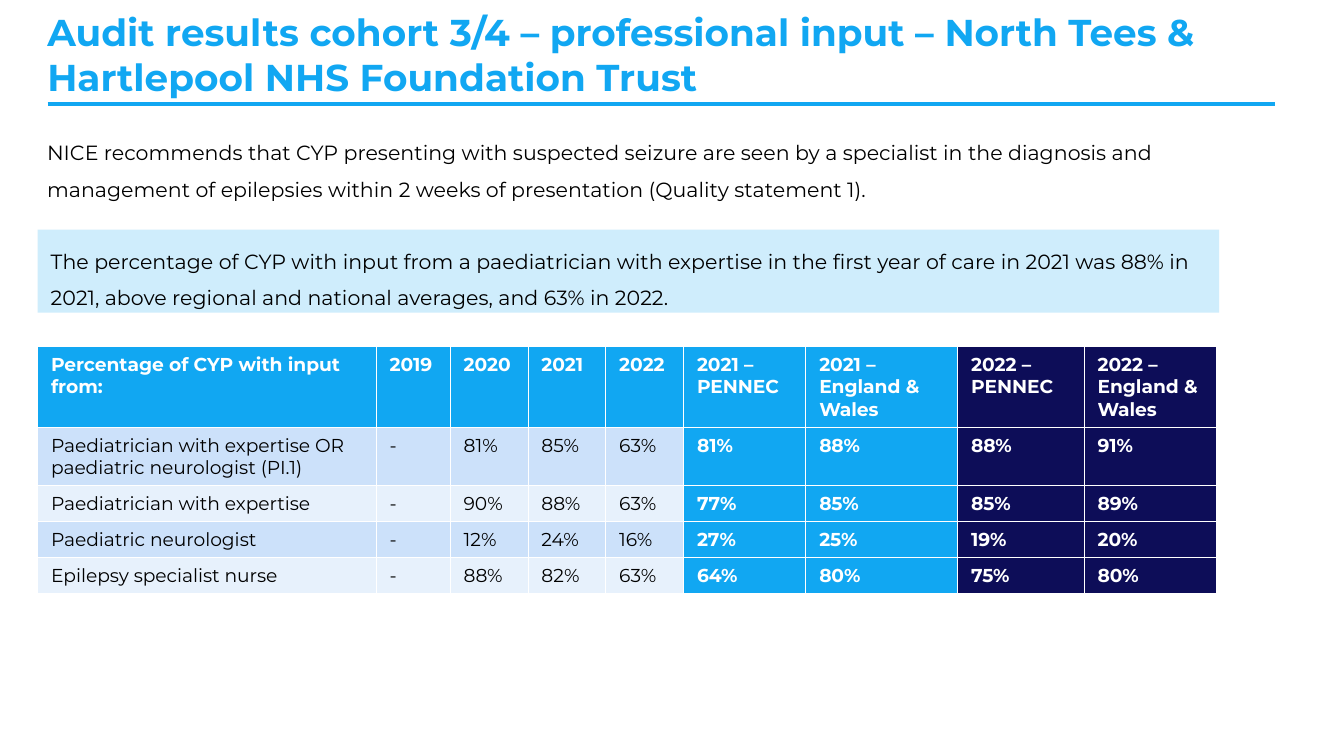
from dataclasses import dataclass

from lxml import etree
from pptx import Presentation
from pptx.dml.color import RGBColor
from pptx.enum.shapes import MSO_CONNECTOR, MSO_SHAPE
from pptx.enum.text import MSO_ANCHOR, PP_ALIGN
from pptx.oxml.ns import qn
from pptx.util import Cm, Pt

LEFT = PP_ALIGN.LEFT
TOP, MIDDLE = MSO_ANCHOR.TOP, MSO_ANCHOR.MIDDLE
RECTANGLE, STRAIGHT = MSO_SHAPE.RECTANGLE, MSO_CONNECTOR.STRAIGHT

COLOURS = {
    "blue": "11A7F2",
    "navy": "0D0D58",
    "pale": "CFEDFC",
    "band_dark": "CCE1FA",
    "band_light": "E7F1FC",
    "black": "000000",
    "white": "FFFFFF",
}
FONT = "Montserrat"
BORDER_WIDTH = Pt(0.5)

TITLE = ("Audit results cohort 3/4 – professional input – North Tees & "
         "Hartlepool NHS Foundation Trust")
COLUMN_WIDTHS = (6.4, 1.4, 1.47, 1.47, 1.47, 2.31, 2.87, 2.39, 2.51)
ROW_HEIGHTS = (1.53, 1.1, 0.67, 0.67, 0.67)
FIRST_AVERAGE, FIRST_NAVY = 5, 7  # columns where the fill changes
TABLE_ROWS = (
    ("Percentage of CYP with input from:", "2019", "2020", "2021", "2022",
     "2021 –PENNEC", "2021 – England & Wales",
     "2022 – PENNEC", "2022 – England & Wales"),
    ("Paediatrician with expertise OR paediatric neurologist (PI.1)",
     "-", "81%", "85%", "63%", "81%", "88%", "88%", "91%"),
    ("Paediatrician with expertise",
     "-", "90%", "88%", "63%", "77%", "85%", "85%", "89%"),
    ("Paediatric neurologist",
     "-", "12%", "24%", "16%", "27%", "25%", "19%", "20%"),
    ("Epilepsy specialist nurse",
     "-", "88%", "82%", "63%", "64%", "80%", "75%", "80%"),
)


@dataclass
class Statement:
    text: str
    left: float
    top: float
    width: float
    height: float
    fill: str | None = None


STATEMENTS = (
    Statement("NICE recommends that CYP presenting with suspected seizure are seen by a "
              "specialist in the diagnosis and management of epilepsies within 2 weeks of "
              "presentation (Quality statement 1).", 0.64, 2.29, 22.38, 1.57),
    Statement("The percentage of CYP with input from a paediatrician with expertise in the "
              "first year of care in 2021 was 88% in 2021, above regional and national "
              "averages, and 63% in 2022.", 0.71, 4.34, 22.33, 1.57, "pale"),
)


def colour(name: str) -> RGBColor:
    return RGBColor.from_string(COLOURS[name])


def write(text_frame, text: str, size: float, colour_name: str, bold: bool = False,
          line_spacing: float = 1.0) -> None:
    text_frame.word_wrap = True
    paragraph = text_frame.paragraphs[0]
    paragraph.alignment = LEFT
    paragraph.line_spacing = line_spacing
    run = paragraph.add_run()
    run.text = text
    for attribute, value in {"name": FONT, "size": Pt(size), "bold": bold}.items():
        setattr(run.font, attribute, value)
    run.font.color.rgb = colour(colour_name)


def add_title(slide) -> None:
    title = slide.shapes.title
    position = {"left": 0.64, "top": 0.74, "width": 22.86, "height": 1.32}
    for attribute, value in position.items():
        setattr(title, attribute, Cm(value))
    frame = title.text_frame
    frame.vertical_anchor = MIDDLE
    frame.margin_bottom = Cm(0.89)  # lifts the two lines above the rule
    write(frame, TITLE, 20, "blue", bold=True)


def add_title_rule(slide) -> None:
    rule = slide.shapes.add_connector(STRAIGHT, Cm(0.9), Cm(1.97), Cm(24.1), Cm(1.97))
    rule.line.color.rgb = colour("blue")
    rule.line.width = Pt(2.25)
    etree.SubElement(rule._element.spPr, qn("a:effectLst"))


def add_statement(slide, statement: Statement) -> None:
    box = [Cm(value) for value in
           (statement.left, statement.top, statement.width, statement.height)]
    if statement.fill:
        shape = slide.shapes.add_shape(RECTANGLE, *box)
        shape.shadow.inherit = False
        shape.fill.solid()
        shape.fill.fore_color.rgb = colour(statement.fill)
        shape.line.fill.background()
    else:
        shape = slide.shapes.add_textbox(*box)
    shape.text_frame.vertical_anchor = TOP
    write(shape.text_frame, statement.text, 11, "black", line_spacing=1.5)


def cell_fill(row: int, column: int) -> str:
    if column >= FIRST_NAVY:
        return "navy"
    if row == 0 or column >= FIRST_AVERAGE:
        return "blue"
    return "band_dark" if row % 2 else "band_light"


def add_borders(cell) -> None:
    properties = cell._tc.get_or_add_tcPr()
    for index, side in enumerate(("lnL", "lnR", "lnT", "lnB")):
        line = etree.Element(qn(f"a:{side}"), w=str(BORDER_WIDTH))
        fill = etree.SubElement(line, qn("a:solidFill"))
        etree.SubElement(fill, qn("a:srgbClr"), val=COLOURS["white"])
        properties.insert(index, line)


def add_results_table(slide) -> None:
    frame = slide.shapes.add_table(
        len(TABLE_ROWS), len(COLUMN_WIDTHS), Cm(0.71), Cm(6.55),
        Cm(sum(COLUMN_WIDTHS)), Cm(sum(ROW_HEIGHTS)))
    table = frame.table
    for column, width in zip(table.columns, COLUMN_WIDTHS):
        column.width = Cm(width)
    for row, height in zip(table.rows, ROW_HEIGHTS):
        row.height = Cm(height)
    for row_index, texts in enumerate(TABLE_ROWS):
        for column_index, text in enumerate(texts):
            cell = table.cell(row_index, column_index)
            strong = row_index == 0 or column_index >= FIRST_AVERAGE
            write(cell.text_frame, text, 10, "white" if strong else "black", bold=strong)
            cell.fill.solid()
            cell.fill.fore_color.rgb = colour(cell_fill(row_index, column_index))
            add_borders(cell)


def main() -> None:
    presentation = Presentation()
    presentation.slide_width, presentation.slide_height = Cm(25.4), Cm(14.29)
    slide = presentation.slides.add_slide(presentation.slide_layouts[5])
    add_title_rule(slide)
    add_title(slide)
    for statement in STATEMENTS:
        add_statement(slide, statement)
    add_results_table(slide)
    presentation.save("out.pptx")


if __name__ == "__main__":
    main()
